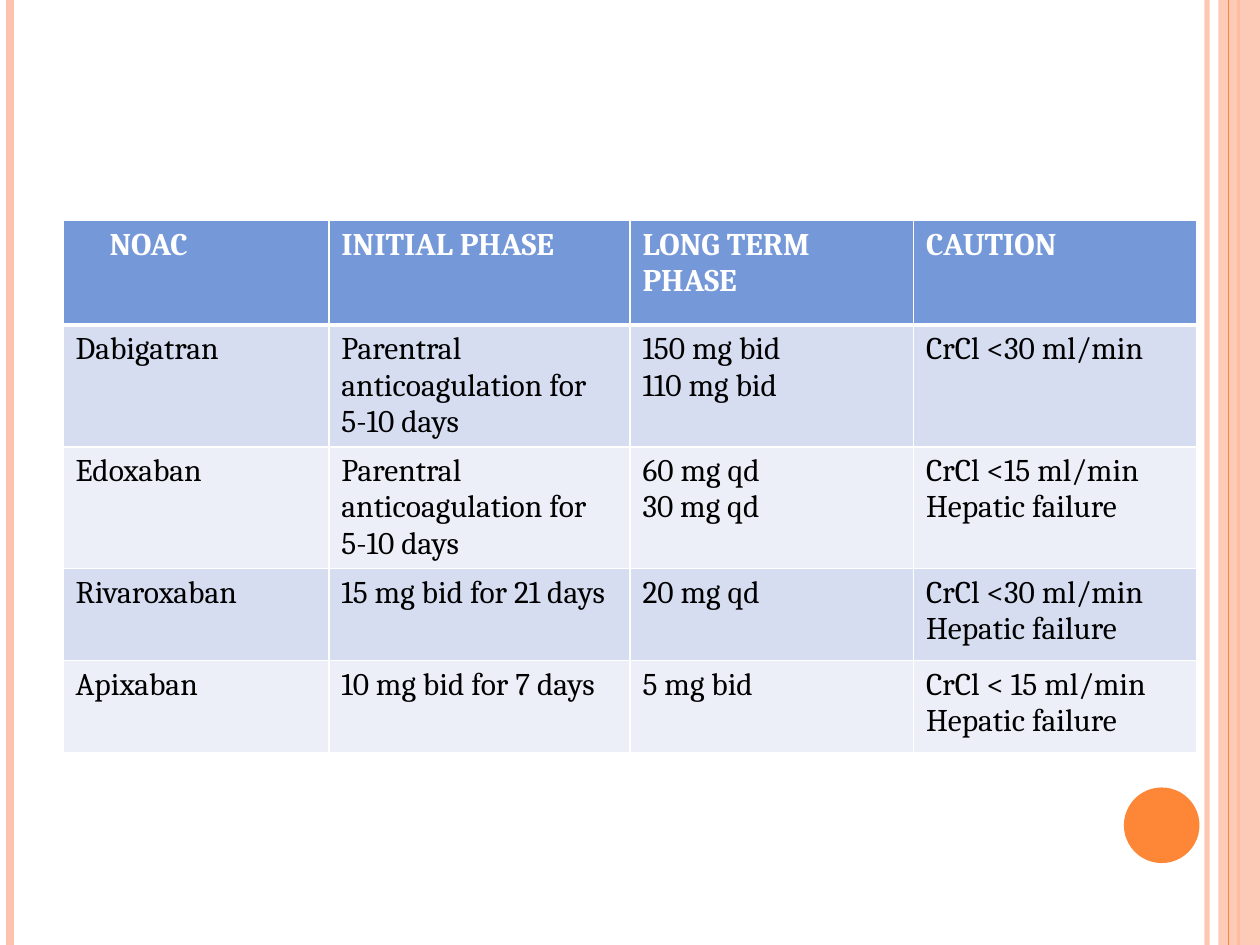
from pptx import Presentation
from pptx import util as u
from pptx.dml.color import RGBColor
from pptx.enum import shapes
from pptx.oxml.ns import qn
from lxml import etree

PEACH, ORANGE, WHITE, BLACK = "FEC3AE", "FE8637", "FFFFFF", "000000"
HEADER_FILL, BAND_FILLS = "7598D9", ("D6DDF1", "ECEFF8")

ROWS = [
    ("NOAC", "INITIAL PHASE", "LONG TERM PHASE", "CAUTION"),
    ("Dabigatran", "Parentral anticoagulation for 5-10 days",
     "150 mg bid\n110 mg bid", "CrCl <30 ml/min"),
    ("Edoxaban", "Parentral anticoagulation for 5-10 days",
     "60 mg qd\n30 mg qd", "CrCl <15 ml/min\nHepatic failure"),
    ("Rivaroxaban", "15 mg bid for 21 days", "20 mg qd",
     "CrCl <30 ml/min\nHepatic failure"),
    ("Apixaban", "10 mg bid for 7 days", "5 mg bid",
     "CrCl < 15 ml/min\nHepatic failure"),
]
COLUMN_WIDTHS = (2.11, 2.39, 2.25, 2.25)
HEADER_HEIGHT, ROW_HEIGHT = 0.83, 0.73
TABLE_LEFT, TABLE_TOP = 0.5, 1.75
NOAC_INDENT = 0.37

BACK_LINES = [(9.58, PEACH, 3, 93), (0.08, PEACH, 4.5, 100), (9.83, ORANGE, 1.5, 100)]
FRONT_LINES = [(9.75, ORANGE, 0.75, 100)]
SIDE_BAND = (shapes.MSO_SHAPE.RECTANGLE, (9.67, 0, 0.33, 7.5), PEACH, 87)
CIRCLE = (shapes.MSO_SHAPE.OVAL, (8.92, 6.25, 0.6, 0.6), ORANGE, 100)


def rgb(color):
    return RGBColor.from_string(color)


def set_opacity(properties, percent):
    if percent < 100:
        color = next(properties.iter(qn("a:srgbClr")))
        etree.SubElement(color, qn("a:alpha"), val=str(percent * 1000))


def add_vertical_lines(slide, lines):
    for x, color, width, opacity in lines:
        line = slide.shapes.add_connector(
            shapes.MSO_CONNECTOR.STRAIGHT, u.Inches(x), 0, u.Inches(x), u.Inches(7.5))
        line.line.color.rgb = rgb(color)
        line.line.width = u.Pt(width)
        properties = line._element.spPr
        set_opacity(properties, opacity)
        etree.SubElement(properties, qn("a:effectLst"))


def add_filled_shape(slide, kind, box, color, opacity):
    shape = slide.shapes.add_shape(kind, *map(u.Inches, box))
    shape.shadow.inherit = False
    shape.fill.solid()
    shape.fill.fore_color.rgb = rgb(color)
    shape.line.fill.background()
    set_opacity(shape._element.spPr, opacity)


def add_borders(cell, widths):
    properties = cell._tc.get_or_add_tcPr()
    for side, width in widths.items():
        border = etree.SubElement(properties, qn(f"a:ln{side}"), w=str(u.Pt(width)))
        fill = etree.SubElement(border, qn("a:solidFill"))
        etree.SubElement(fill, qn("a:srgbClr"), val=WHITE)


def format_cell(cell, content, row):
    header = row == 0
    add_borders(cell, {"L": 1, "R": 1, "T": 3 if row == 1 else 1, "B": 3 if header else 1})
    cell.fill.solid()
    cell.fill.fore_color.rgb = rgb(HEADER_FILL if header else BAND_FILLS[(row - 1) % 2])
    cell.text = content
    font_format = {"name": "Cambria", "size": u.Pt(18), "bold": header}
    for paragraph in cell.text_frame.paragraphs:
        font = paragraph.runs[0].font
        for name, value in font_format.items():
            setattr(font, name, value)
        font.color.rgb = rgb(WHITE if header else BLACK)


def add_drug_table(slide):
    heights = [HEADER_HEIGHT] + [ROW_HEIGHT] * (len(ROWS) - 1)
    box = (TABLE_LEFT, TABLE_TOP, sum(COLUMN_WIDTHS), sum(heights))
    table = slide.shapes.add_table(
        len(ROWS), len(COLUMN_WIDTHS), *map(u.Inches, box)).table
    for column, width in zip(table.columns, COLUMN_WIDTHS):
        column.width = u.Inches(width)
    for row, height in zip(table.rows, heights):
        row.height = u.Inches(height)
    for row, contents in enumerate(ROWS):
        for column, content in enumerate(contents):
            format_cell(table.cell(row, column), content, row)
    table.cell(0, 0).margin_left = u.Inches(NOAC_INDENT)


def main():
    presentation = Presentation()
    presentation.slide_width = u.Inches(10)
    presentation.slide_height = u.Inches(7.5)
    slide = presentation.slides.add_slide(presentation.slide_layouts[6])
    add_vertical_lines(slide, BACK_LINES)
    add_filled_shape(slide, *SIDE_BAND)
    add_vertical_lines(slide, FRONT_LINES)
    add_filled_shape(slide, *CIRCLE)
    add_drug_table(slide)
    presentation.save("out.pptx")


if __name__ == "__main__":
    main()
